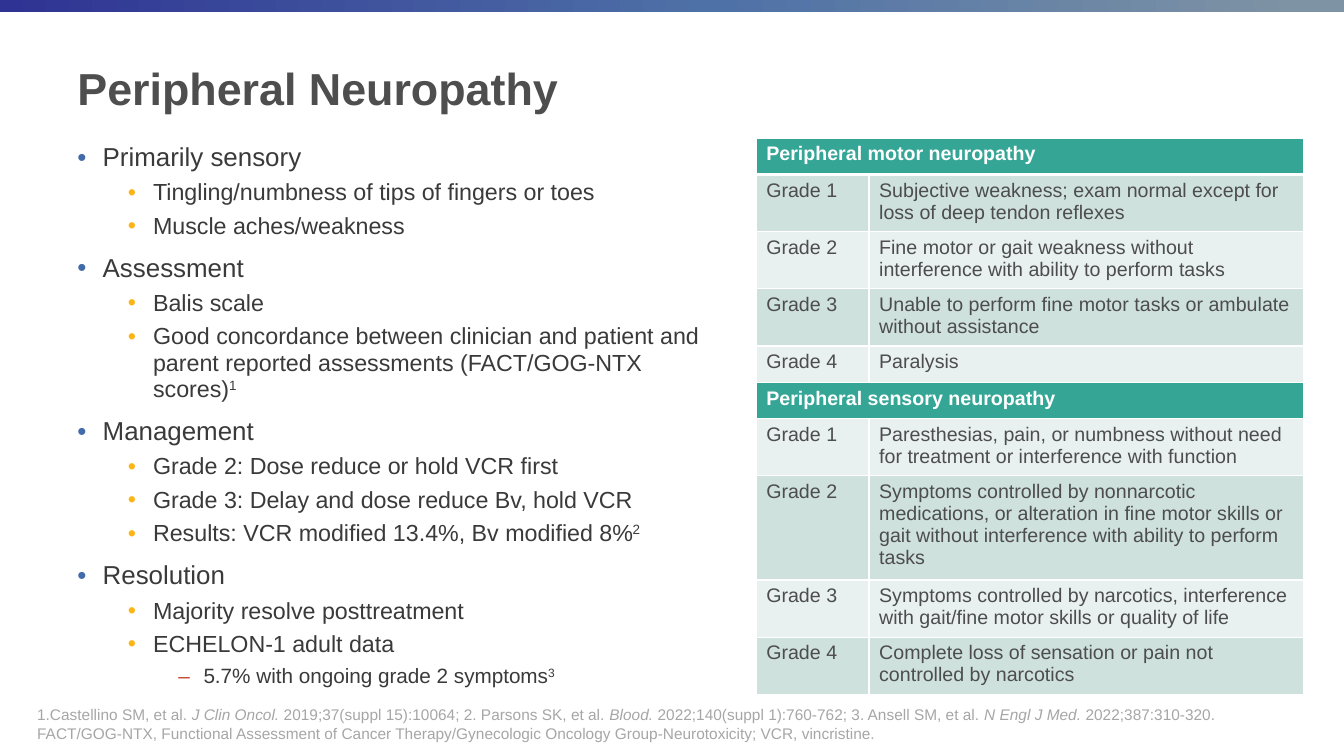
import pptx
import pptx.util
import pptx.dml.color
import pptx.enum.shapes
import pptx.enum.text
import pptx.oxml
import pptx.oxml.ns
from pptx.util import Inches

FONT = "Arial"
COLORS = {
    "white": "FFFFFF", "title": "4D4E4D", "body": "3A3A3A", "cell": "4D4D4D",
    "note": "A6A6A6", "header": "35A696", "band_dark": "CEE1DD", "band_light": "E8F1EF",
}
BAR_STOPS = [(0, "2F3393"), (53, "4E71A7"), (97, "7E93A4")]

# Outline levels: size, space before, bullet, bullet colour
LEVELS = [(18.5, 10, "•", "416BA9"), (16.6, 5, "•", "FDB515"), (14.8, 5, "–", "C3472E")]

# Level, text, reference number
OUTLINE = [
    (0, "Primarily sensory", ""),
    (1, "Tingling/numbness of tips of fingers or toes", ""),
    (1, "Muscle aches/weakness", ""),
    (0, "Assessment", ""),
    (1, "Balis scale", ""),
    (1, "Good concordance between clinician and patient and parent reported "
        "assessments (FACT/GOG-NTX scores)", "1"),
    (0, "Management", ""),
    (1, "Grade 2: Dose reduce or hold VCR first", ""),
    (1, "Grade 3: Delay and dose reduce Bv, hold VCR", ""),
    (1, "Results: VCR modified 13.4%, Bv modified 8%", "2"),
    (0, "Resolution", ""),
    (1, "Majority resolve posttreatment", ""),
    (1, "ECHELON-1 adult data", ""),
    (2, "5.7% with ongoing grade 2 symptoms", "3"),
]

# Each heading with the descriptions of grades 1 to 4
GRADES = {
    "Peripheral motor neuropathy": [
        "Subjective weakness; exam normal except for loss of deep tendon reflexes",
        "Fine motor or gait weakness without interference with ability to perform tasks",
        "Unable to perform fine motor tasks or ambulate without assistance",
        "Paralysis",
    ],
    "Peripheral sensory neuropathy": [
        "Paresthesias, pain, or numbness without need for treatment or interference with function",
        "Symptoms controlled by nonnarcotic medications, or alteration in fine motor skills "
        "or gait without interference with ability to perform tasks",
        "Symptoms controlled by narcotics, interference with gait/fine motor skills or quality of life",
        "Complete loss of sensation or pain not controlled by narcotics",
    ],
}

# Lines of (text, italic) pieces
REFERENCES = [
    [("1.Castellino SM, et al. ", False), ("J Clin Oncol. ", True),
     ("2019;37(suppl 15):10064; 2. Parsons SK, et al. ", False), ("Blood. ", True),
     ("2022;140(suppl 1):760-762; 3. Ansell SM, et al. ", False), ("N Engl J Med. ", True),
     ("2022;387:310-320.", False)],
    [("FACT/GOG-NTX, Functional Assessment of Cancer Therapy/Gynecologic Oncology "
      "Group-Neurotoxicity; VCR, vincristine.", False)],
]


def rgb(name):
    return pptx.dml.color.RGBColor.from_string(COLORS[name])


def xml(tag, content, attributes=""):
    return pptx.oxml.parse_xml(
        f'<a:{tag} {pptx.oxml.ns.nsdecls("a")} {attributes}>{content}</a:{tag}>')


def add_text(para, text, size, color, bold=False, italic=False, raised=False):
    span = para.add_run()
    span.text = text
    font = span.font
    font.name, font.size = FONT, pptx.util.Pt(size)
    font.bold, font.italic = bold, italic
    font.color.rgb = rgb(color)
    if raised:
        font._element.set("baseline", "30000")


def add_box(page, box, wrap=True):
    frame = page.shapes.add_textbox(*map(Inches, box)).text_frame
    frame.word_wrap = wrap
    return frame


def add_bar(page, box):
    bar = page.shapes.add_shape(pptx.enum.shapes.MSO_SHAPE.RECTANGLE, *map(Inches, box))
    bar.shadow.inherit = False
    bar.line.fill.background()
    bar.fill.gradient()
    bar.fill.gradient_angle = 0
    stops = bar._element.spPr.find(".//" + pptx.oxml.ns.qn("a:gsLst"))
    stops[:] = [xml("gs", f'<a:srgbClr val="{color}"/>', f'pos="{place * 1000}"')
                for place, color in BAR_STOPS]


def add_title(page, box):
    frame = add_box(page, box)
    frame.vertical_anchor = pptx.enum.text.MSO_ANCHOR.MIDDLE
    add_text(frame.paragraphs[0], "Peripheral Neuropathy", 32, "title", bold=True)


def add_outline(page, box):
    frame = add_box(page, box)
    for index, (level, text, reference) in enumerate(OUTLINE):
        size, before, bullet, color = LEVELS[level]
        para = frame.add_paragraph() if index else frame.paragraphs[0]
        para.level = level
        para.line_spacing = 0.95
        para.space_before = pptx.util.Pt(before)
        add_text(para, text, size, "body")
        if reference:
            add_text(para, reference, size, "body", raised=True)
        # Bullet and hanging indent
        properties = para._p.get_or_add_pPr()
        properties.set("marL", str(Inches(0.25 + 0.5 * level)))
        properties.set("indent", str(Inches(-0.25)))
        properties.append(xml("buClr", f'<a:srgbClr val="{color}"/>'))
        properties.append(xml("buFont", "", f'typeface="{FONT}"'))
        properties.append(xml("buChar", "", f'char="{bullet}"'))


def style_cell(cell, fill, bottom=1):
    cell.fill.solid()
    cell.fill.fore_color.rgb = rgb(fill)
    line = f'<a:solidFill><a:srgbClr val="{COLORS["white"]}"/></a:solidFill>'
    widths = {"lnL": 1, "lnR": 1, "lnT": 1, "lnB": bottom}
    for place, (side, width) in enumerate(widths.items()):
        border = xml(side, line, f'w="{pptx.util.Pt(width)}"')
        cell._tc.get_or_add_tcPr().insert(place, border)


def add_grades(page, box):
    rows = []
    for heading, descriptions in GRADES.items():
        rows.append((heading, ""))
        rows += [(f"Grade {grade}", text) for grade, text in enumerate(descriptions, 1)]
    left, top, width, row_height = box
    table = page.shapes.add_table(
        len(rows), 2, *map(Inches, (left, top, width, row_height * len(rows)))).table
    table.columns[0].width = Inches(1.12)
    table.columns[1].width = Inches(width - 1.12)
    for index, texts in enumerate(rows):
        heading = texts[0] in GRADES
        fill = "header" if heading else "band_dark" if index % 2 else "band_light"
        for column, text in enumerate(texts):
            cell = table.cell(index, column)
            style_cell(cell, fill, bottom=1 if index else 3)
            if text:
                add_text(cell.text_frame.paragraphs[0], text, 14,
                         "white" if heading else "cell", bold=heading)
        if heading:
            table.cell(index, 0).merge(table.cell(index, 1))


def add_references(page, box):
    frame = add_box(page, box, wrap=False)
    frame.auto_size = pptx.enum.text.MSO_AUTO_SIZE.SHAPE_TO_FIT_TEXT
    para = frame.paragraphs[0]
    for index, pieces in enumerate(REFERENCES):
        if index:
            para.add_line_break()
        for text, italic in pieces:
            add_text(para, text, 11, "note", italic=italic)


def main():
    deck = pptx.Presentation()
    deck.slide_width, deck.slide_height = Inches(13.33), Inches(7.5)
    page = deck.slides.add_slide(deck.slide_layouts[6])
    add_bar(page, (0, 0, 13.33, 0.12))
    add_title(page, (0.67, 0.22, 11.75, 1.3))
    add_outline(page, (0.67, 1.37, 6.55, 5.51))
    add_grades(page, (7.5, 1.37, 5.43, 0.36))
    add_references(page, (0.27, 6.95, 11.95, 0.47))
    deck.save("out.pptx")


if __name__ == "__main__":
    main()
